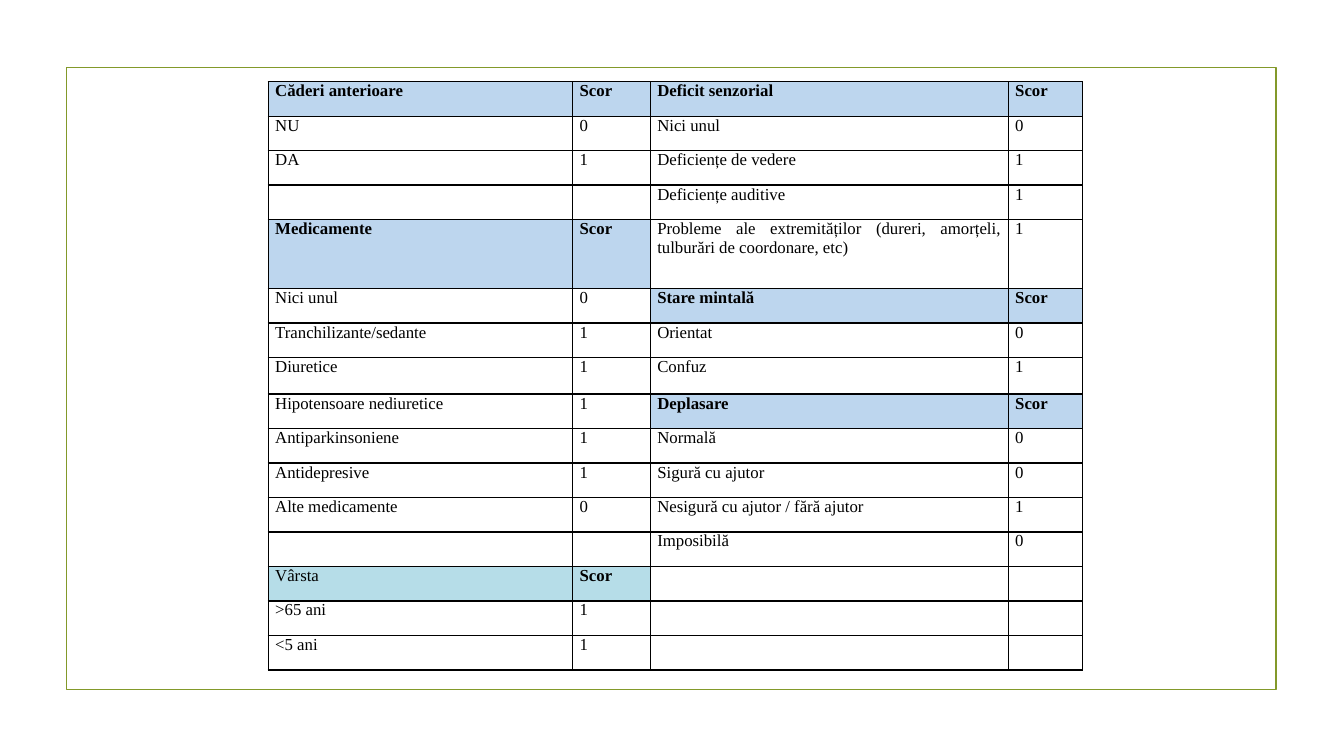
"""Build a slide with a fall-risk scoring table inside a thin frame."""
from lxml.etree import SubElement
from pptx import Presentation
from pptx.dml.color import RGBColor
from pptx.enum.shapes import MSO_SHAPE
from pptx.enum.text import PP_ALIGN
from pptx.oxml.ns import qn
from pptx.util import Inches, Pt

BLACK = RGBColor(0x00, 0x00, 0x00)
OLIVE = RGBColor(0x83, 0x99, 0x2A)
BLUE = RGBColor(0xBD, 0xD6, 0xEE)
TEAL = RGBColor(0xB6, 0xDD, 0xE8)
FONT = "Times New Roman"
HEADING = "Scor"
AGE = "Vârsta"

ROWS = [
    ("Căderi anterioare", HEADING, "Deficit senzorial", HEADING),
    ("NU", "0", "Nici unul", "0"),
    ("DA", "1", "Deficiențe de vedere", "1"),
    ("", "", "Deficiențe auditive", "1"),
    ("Medicamente", HEADING,
     "Probleme ale extremităților (dureri, amorțeli, tulburări de coordonare, etc)", "1"),
    ("Nici unul", "0", "Stare mintală", HEADING),
    ("Tranchilizante/sedante", "1", "Orientat", "0"),
    ("Diuretice", "1", "Confuz", "1"),
    ("Hipotensoare nediuretice", "1", "Deplasare", HEADING),
    ("Antiparkinsoniene", "1", "Normală", "0"),
    ("Antidepresive", "1", "Sigură cu ajutor", "0"),
    ("Alte medicamente", "0", "Nesigură cu ajutor / fără ajutor", "1"),
    ("", "", "Imposibilă", "0"),
    (AGE, HEADING, "", ""),
    (">65 ani", "1", "", ""),
    ("<5 ani", "1", "", ""),
]
COLUMN_WIDTHS = (3.02, 0.77, 3.55, 0.74)
TABLE_HEIGHT = 5.84
DOUBLE_ROW, LOOSE_ROW, LOOSE_EXTRA = 4, 7, 0.02


def add_borders(cell):
    properties = cell._tc.get_or_add_tcPr()
    for side in ("lnL", "lnR", "lnT", "lnB"):
        line = SubElement(properties, qn(f"a:{side}"), w=str(Pt(1)))
        fill = SubElement(line, qn("a:solidFill"))
        SubElement(fill, qn("a:srgbClr"), val=str(BLACK))


def format_cell(cell, text, fill, bold):
    cell.margin_left = cell.margin_right = Inches(0.07)
    cell.margin_top = cell.margin_bottom = 0
    add_borders(cell)
    if fill is None:
        cell.fill.background()
    else:
        cell.fill.solid()
        cell.fill.fore_color.rgb = fill
    if not text:
        return
    cell.text_frame.text = text
    para = cell.text_frame.paragraphs[0]
    para.alignment = PP_ALIGN.JUSTIFY
    font = para.runs[0].font
    font.name, font.size, font.bold = FONT, Pt(12), bold
    font.color.rgb = BLACK


def add_frame(page):
    frame = page.shapes.add_shape(
        MSO_SHAPE.RECTANGLE, Inches(0.66), Inches(0.67), Inches(12), Inches(6.17))
    frame.shadow.inherit = False
    frame.fill.background()
    frame.line.color.rgb = OLIVE
    frame.line.width = Pt(1.25)


def add_score_table(page):
    table = page.shapes.add_table(
        len(ROWS), len(COLUMN_WIDTHS), Inches(2.66), Inches(0.81),
        Inches(sum(COLUMN_WIDTHS)), Inches(TABLE_HEIGHT)).table
    table.first_row = table.horz_banding = False
    for column, width in zip(table.columns, COLUMN_WIDTHS):
        column.width = Inches(width)
    row_height = (TABLE_HEIGHT - LOOSE_EXTRA) / (len(ROWS) + 1)
    for row in table.rows:
        row.height = Inches(row_height)
    table.rows[DOUBLE_ROW].height = Inches(2 * row_height)
    table.rows[LOOSE_ROW].height = Inches(row_height + LOOSE_EXTRA)

    for row_index, texts in enumerate(ROWS):
        for column_index, text in enumerate(texts):
            pair = column_index // 2 * 2
            label, score = texts[pair:pair + 2]
            is_heading = score == HEADING
            fill = (TEAL if label == AGE else BLUE) if is_heading else None
            format_cell(table.cell(row_index, column_index), text, fill,
                        is_heading and text != AGE)


def main():
    deck = Presentation()
    deck.slide_width, deck.slide_height = Inches(13.33), Inches(7.5)
    page = deck.slides.add_slide(deck.slide_layouts[6])
    add_frame(page)
    add_score_table(page)
    deck.save("out.pptx")


if __name__ == "__main__":
    main()
